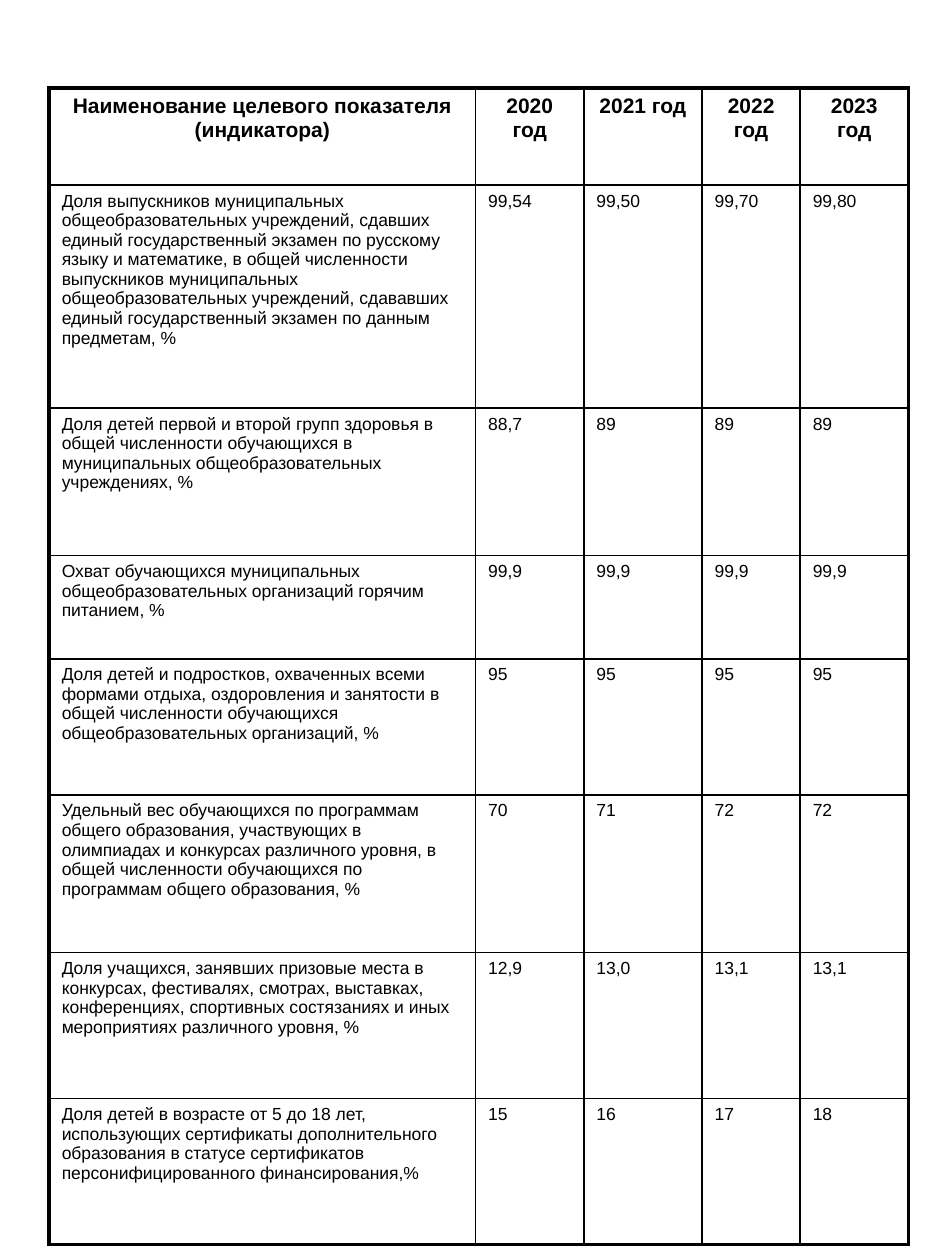
from dataclasses import dataclass

from lxml import etree
from pptx import Presentation
from pptx import util as u
from pptx.dml.color import RGBColor
from pptx.enum import text
from pptx.oxml.ns import qn


@dataclass(frozen=True)
class Theme:
    """Colours, font, type sizes and rule widths."""
    ink: str = "000000"
    font: str = "Arial"
    head: int = 12
    body: int = 10
    thin: float = 1
    thick: float = 2.25


THEME = Theme()
COLS = [3.39, 0.86, 0.94, 0.78, 0.86]
ROWS = [0.77, 1.77, 1.17, 0.82, 1.08, 1.25, 1.16, 1.16]
DATA = [
    ("Наименование целевого показателя (индикатора)",
     "2020 год", "2021 год", "2022 год", "2023 год"),
    ("Доля выпускников муниципальных общеобразовательных учреждений, сдавших "
     "единый государственный экзамен по русскому языку и математике, в общей "
     "численности выпускников муниципальных общеобразовательных учреждений, "
     "сдававших единый государственный экзамен по данным предметам, %",
     "99,54", "99,50", "99,70", "99,80"),
    ("Доля детей первой и второй групп здоровья в общей численности "
     "обучающихся в муниципальных общеобразовательных учреждениях, %",
     "88,7", "89", "89", "89"),
    ("Охват обучающихся муниципальных общеобразовательных организаций "
     "горячим питанием, %", "99,9", "99,9", "99,9", "99,9"),
    ("Доля детей и подростков, охваченных всеми формами отдыха, оздоровления "
     "и занятости в общей численности обучающихся общеобразовательных "
     "организаций, %", "95", "95", "95", "95"),
    ("Удельный вес обучающихся по программам общего образования, участвующих "
     "в олимпиадах и конкурсах различного уровня, в общей численности "
     "обучающихся по программам общего образования, %",
     "70", "71", "72", "72"),
    ("Доля учащихся, занявших призовые места в конкурсах, фестивалях, "
     "смотрах, выставках, конференциях, спортивных состязаниях и иных "
     "мероприятиях различного уровня, %", "12,9", "13,0", "13,1", "13,1"),
    ("Доля детей в возрасте от 5 до 18 лет, использующих сертификаты "
     "дополнительного образования в статусе сертификатов "
     "персонифицированного финансирования,%", "15", "16", "17", "18"),
]


def set_rules(cell, edges):
    """Draw the four cell borders, thick on the outer edges."""
    props = cell._tc.get_or_add_tcPr()
    for side, outer in edges.items():
        width = THEME.thick if outer else THEME.thin
        line = etree.SubElement(props, qn(f"a:ln{side}"), w=str(u.Pt(width)))
        fill = etree.SubElement(line, qn("a:solidFill"))
        etree.SubElement(fill, qn("a:srgbClr"), val=THEME.ink)


def fill_cell(cell, words, head):
    """Write and format the text of one cell."""
    cell.margin_left = cell.margin_right = u.Inches(0.1)
    cell.margin_top = cell.margin_bottom = u.Inches(0.05)
    cell.fill.background()
    para = cell.text_frame.paragraphs[0]
    para.text = words
    para.alignment = text.PP_ALIGN.CENTER if head else text.PP_ALIGN.LEFT
    font = para.runs[0].font
    font.name = THEME.font
    font.size = u.Pt(THEME.head if head else THEME.body)
    font.bold = head
    font.color.rgb = RGBColor.from_string(THEME.ink)


def add_goals(slide, left, top, width, height):
    """Place the table of target indicators in the given box."""
    box = [u.Inches(n) for n in (left, top, width, height)]
    table = slide.shapes.add_table(len(ROWS), len(COLS), *box).table
    table.first_row = table.horz_banding = False
    for col, size in zip(table.columns, COLS):
        col.width = u.Inches(width * size / sum(COLS))
    for row, size in zip(table.rows, ROWS):
        row.height = u.Inches(height * size / sum(ROWS))
    for i, line in enumerate(DATA):
        for j, words in enumerate(line):
            cell = table.cell(i, j)
            set_rules(cell, {"L": j == 0, "R": j == len(COLS) - 1,
                             "T": i == 0, "B": i == len(ROWS) - 1})
            fill_cell(cell, words, i == 0)


def main():
    """Build the slide and save it."""
    deck = Presentation()
    deck.slide_width, deck.slide_height = u.Inches(7.5), u.Inches(10)
    slide = deck.slides.add_slide(deck.slide_layouts[6])
    add_goals(slide, 0.39, 0.7, 6.82, 9.18)
    deck.save("out.pptx")


if __name__ == "__main__":
    main()
